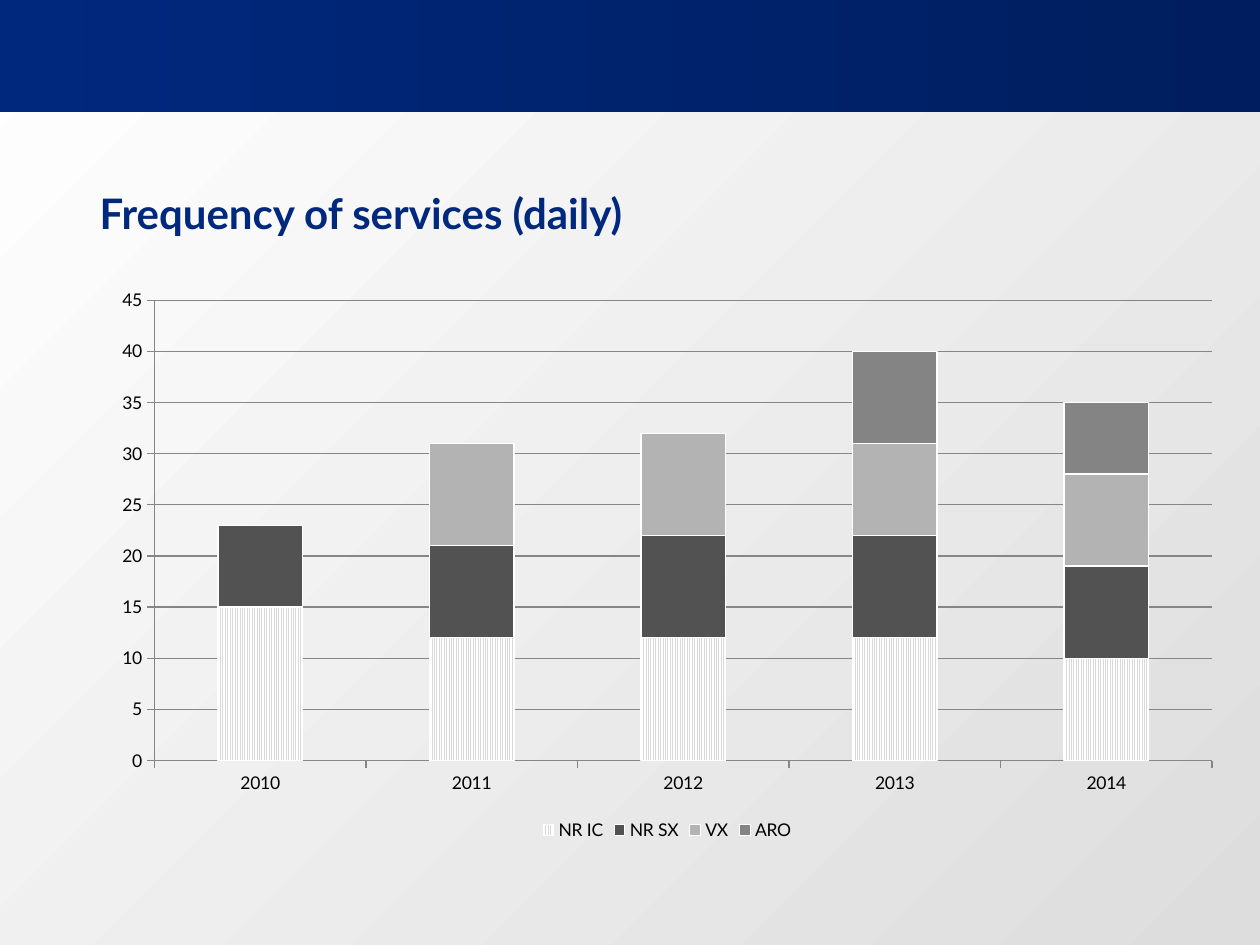
from pptx import Presentation
from pptx import util as u
from pptx.chart.data import CategoryChartData
from pptx.dml.color import RGBColor
from pptx.enum import chart as ch, dml, shapes, text


def rgb(code):
    return RGBColor.from_string(code)


def put(obj, vals):
    for key, val in vals.items():
        setattr(obj, key, val)


def box(*sides):
    return [u.Inches(side) for side in sides]


class Deck:
    font = "Lato"
    navy = "00287D"
    ink = "000000"
    rule = "868686"

    def __init__(self, wide, high):
        self.prs = Presentation()
        put(self.prs, {"slide_width": u.Inches(wide), "slide_height": u.Inches(high)})
        self.slide = self.prs.slides.add_slide(self.prs.slide_layouts[6])

    def style(self, font, size, code, bold=False):
        put(font, {"name": self.font, "size": u.Pt(size), "bold": bold})
        font.color.rgb = rgb(code)

    def panel(self, area, codes, angle):
        rect = self.slide.shapes.add_shape(shapes.MSO_SHAPE.RECTANGLE, *box(*area))
        rect.shadow.inherit = False
        rect.line.fill.background()
        rect.fill.gradient()
        rect.fill.gradient_angle = angle
        for stop, code in zip(rect.fill.gradient_stops, codes):
            stop.color.rgb = rgb(code)

    def title(self, area, words):
        frame = self.slide.shapes.add_textbox(*box(*area)).text_frame
        put(frame, {
            "word_wrap": True,
            "vertical_anchor": text.MSO_ANCHOR.BOTTOM,
            "margin_left": 0,
            "margin_right": 0,
        })
        run = frame.paragraphs[0].add_run()
        run.text = words
        self.style(run.font, 24, self.navy, True)

    def stack(self, area, cats, rows):
        data = CategoryChartData()
        data.categories = cats
        for name, vals, code in rows:
            data.add_series(name, vals)
        kind = ch.XL_CHART_TYPE.COLUMN_STACKED
        chart = self.slide.shapes.add_chart(kind, *box(*area), data).chart
        put(chart, {"has_title": False, "has_legend": True})
        put(chart.legend, {
            "position": ch.XL_LEGEND_POSITION.BOTTOM,
            "include_in_layout": False,
        })
        self.style(chart.font, 10, self.ink)
        plot = chart.plots[0]
        put(plot, {"gap_width": 150, "overlap": 100, "vary_by_categories": False})
        for series, (name, vals, code) in zip(plot.series, rows):
            self.paint(series.format, code)
        put(chart.value_axis, {
            "minimum_scale": 0,
            "maximum_scale": 45,
            "major_unit": 5,
            "has_major_gridlines": True,
        })
        lines = [chart.value_axis.major_gridlines.format.line]
        for axis in (chart.category_axis, chart.value_axis):
            axis.major_tick_mark = ch.XL_TICK_MARK.OUTSIDE
            lines.append(axis.format.line)
        for line in lines:
            line.color.rgb = rgb(self.rule)
            line.width = u.Pt(0.75)

    def paint(self, form, code):
        if code:
            form.fill.solid()
            form.fill.fore_color.rgb = rgb(code)
        else:
            form.fill.patterned()
            form.fill.pattern = dml.MSO_PATTERN.NARROW_VERTICAL
            form.fill.fore_color.rgb = rgb("D9D9D9")
            form.fill.back_color.rgb = rgb("FFFFFF")
        form.line.color.rgb = rgb("FFFFFF")
        form.line.width = u.Pt(0.75)


def main():
    deck = Deck(10, 7.5)
    deck.panel((0, 0, 10, 7.5), ("FFFFFF", "DDDDDD"), 315)
    deck.panel((0, 0, 10, 0.89), (deck.navy, "001E5F"), 0)
    deck.title((0.79, 1.23, 8.56, 0.71), "Frequency of services (daily)")
    deck.stack(
        (0.79, 2.21, 9.01, 4.5),
        [str(year) for year in range(2010, 2015)],
        [
            ("NR IC", (15, 12, 12, 12, 10), None),
            ("NR SX", (8, 9, 10, 10, 9), "525252"),
            ("VX", (0, 10, 10, 9, 9), "B3B3B3"),
            ("ARO", (0, 0, 0, 9, 7), "848484"),
        ],
    )
    deck.prs.save("out.pptx")


if __name__ == "__main__":
    main()
